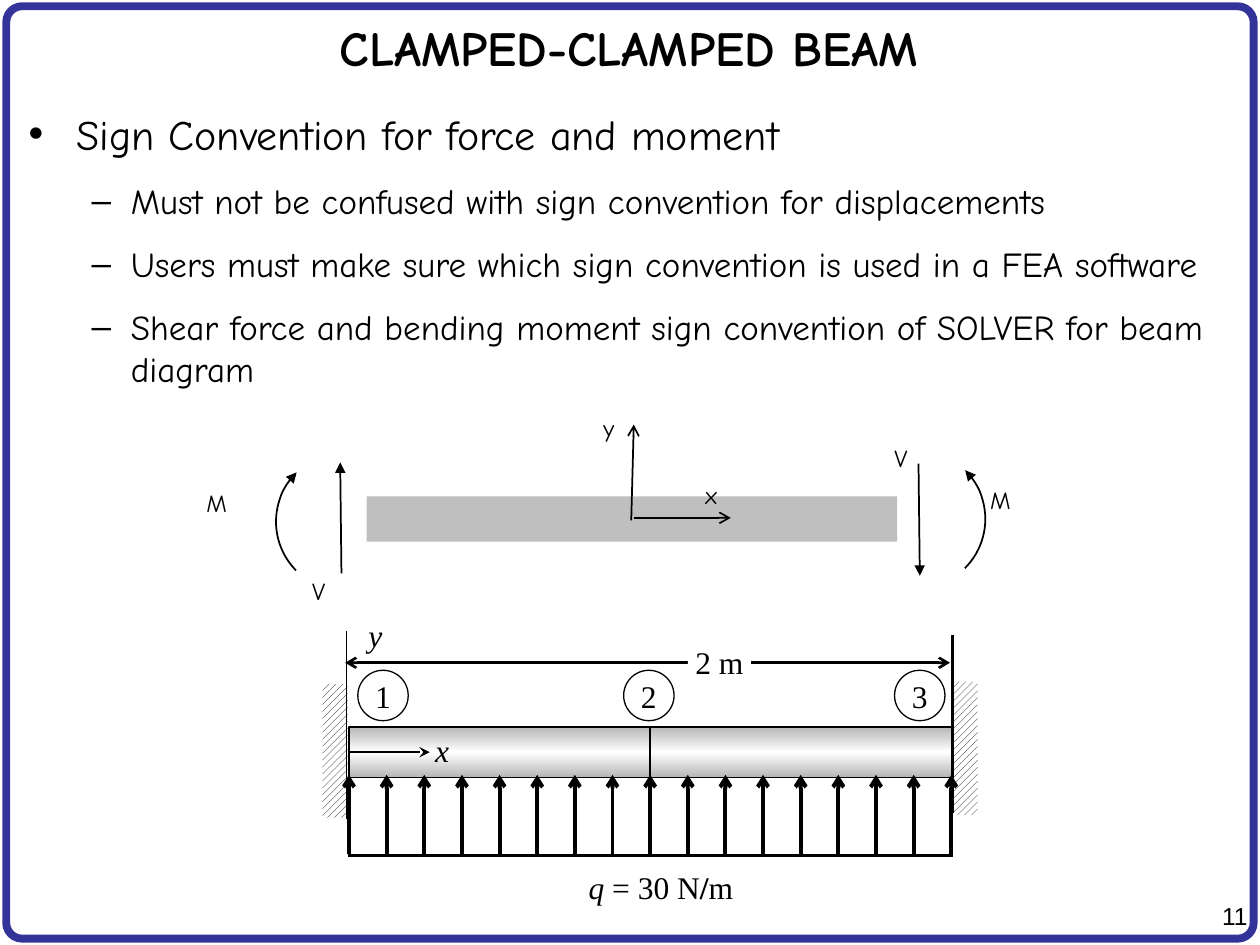
import copy

import pptx
import pptx.dml.color
import pptx.enum.dml
import pptx.enum.shapes
import pptx.enum.text
import pptx.oxml.ns
import pptx.oxml.xmlchemy
import pptx.util

Inches = pptx.util.Inches
Pt = pptx.util.Pt
qn = pptx.oxml.ns.qn
RGBColor = pptx.dml.color.RGBColor
SHAPE = pptx.enum.shapes.MSO_SHAPE
ALIGN = pptx.enum.text.PP_ALIGN
ANCHOR = pptx.enum.text.MSO_ANCHOR

BLACK = RGBColor(0x00, 0x00, 0x00)
WHITE = RGBColor(0xFF, 0xFF, 0xFF)
FRAME_BLUE = RGBColor(0x33, 0x33, 0x99)
BEAM_GREY = RGBColor(0xBF, 0xBF, 0xBF)
STEEL_EDGE = RGBColor(0xB6, 0xB6, 0xB6)

COMIC = "Comic Neue"
TIMES = "Times New Roman"

POINTS = [
    (0, "Sign Convention for force and moment"),
    (1, "Must not be confused with sign convention for displacements"),
    (1, "Users must make sure which sign convention is used in a FEA software"),
    (1, "Shear force and bending moment sign convention of SOLVER for beam diagram"),
]
# level: (bullet, text indent, hanging indent, size)
LEVELS = {0: ("•", 0.38, 0.38, 24), 1: ("–", 0.81, 0.31, 20)}


def add_run(paragraph, text, font, size, bold=False, italic=False):
    run = paragraph.add_run()
    run.text = text
    run.font.name = font
    run.font.size = Pt(size)
    run.font.bold = bold
    run.font.italic = italic
    run.font.color.rgb = BLACK


def set_arrowheads(element, head, tail):
    """Put arrowheads at the start (head) and end (tail) of an outlined element."""
    outline = element.spPr.find(qn("a:ln"))
    for tag, kind in (("a:headEnd", head), ("a:tailEnd", tail)):
        if kind:
            end = outline.makeelement(qn(tag), {"type": kind})
            outline.append(end)


def add_line(shapes, start, end, width=1, head=None, tail=None):
    line = shapes.add_connector(pptx.enum.shapes.MSO_CONNECTOR.STRAIGHT,
                                *(Inches(v) for v in (*start, *end)))
    line.line.width = Pt(width)
    line.line.color.rgb = BLACK
    set_arrowheads(line._element, head, tail)
    properties = line._element.spPr
    properties.append(properties.makeelement(qn("a:effectLst"), {}))
    return line


def add_outline(shapes, kind, box, fill=None, line=None, width=0.75):
    shape = shapes.add_shape(kind, *(Inches(v) for v in box))
    shape.shadow.inherit = False
    if fill is None:
        shape.fill.background()
    else:
        shape.fill.solid()
        shape.fill.fore_color.rgb = fill
    if line is None:
        shape.line.fill.background()
    else:
        shape.line.width = Pt(width)
        shape.line.color.rgb = line
    return shape


def set_tight_text(shape, anchor, *runs):
    """Centre Times text without insets; each run is (text, bold, italic)."""
    frame = shape.text_frame
    frame.margin_left = frame.margin_right = frame.margin_top = frame.margin_bottom = 0
    frame.word_wrap = True
    frame.vertical_anchor = anchor
    frame.paragraphs[0].alignment = ALIGN.CENTER
    for text, bold, italic in runs:
        add_run(frame.paragraphs[0], text, TIMES, 18, bold, italic)


def add_tight_label(shapes, box, *runs):
    label = shapes.add_textbox(*(Inches(v) for v in box))
    set_tight_text(label, ANCHOR.TOP, *runs)


def add_label(shapes, text, left, top, width=0.7, height=0.34, font=COMIC, align=ALIGN.LEFT):
    label = shapes.add_textbox(*(Inches(v) for v in (left, top, width, height)))
    label.text_frame.word_wrap = True
    label.text_frame.paragraphs[0].alignment = align
    add_run(label.text_frame.paragraphs[0], text, font, 14)


def add_page_frame(shapes, left, top, width, height):
    frame = add_outline(shapes, SHAPE.ROUNDED_RECTANGLE, (left, top, width, height),
                        line=FRAME_BLUE, width=4.5)
    frame.adjustments[0] = 0.017
    add_label(shapes, "11", left + width - 0.49, top + height - 0.35, 0.54, 0.33,
              "Arial", ALIGN.RIGHT)


def set_title(title, left, top, width, height):
    title.left, title.top, title.width, title.height = (
        Inches(v) for v in (left, top, width, height))
    title.text_frame.vertical_anchor = ANCHOR.MIDDLE
    heading = title.text_frame.paragraphs[0]
    heading.alignment = ALIGN.CENTER
    add_run(heading, "CLAMPED-CLAMPED BEAM", COMIC, 28, bold=True)


def add_points(shapes, left, top, width, height):
    frame = shapes.add_textbox(*(Inches(v) for v in (left, top, width, height))).text_frame
    frame.word_wrap = True
    for index, (level, text) in enumerate(POINTS):
        bullet, indent, hanging, size = LEVELS[level]
        point = frame.add_paragraph() if index else frame.paragraphs[0]
        point.level = level
        point.space_before = Pt(12)
        properties = point._p.get_or_add_pPr()
        properties.set("marL", str(Inches(indent)))
        properties.set("indent", str(-Inches(hanging)))
        for tag, name, value in (("a:buFont", "typeface", "Arial"), ("a:buChar", "char", bullet)):
            properties.append(properties.makeelement(qn(tag), {name: value}))
        add_run(point, text, COMIC, size)


def add_sign_convention(slide, left, top):
    shapes = slide.shapes.add_group_shape().shapes
    add_line(shapes, (left + 1.17, top + 1.32), (left + 1.16, top + 0.44), tail="triangle")
    add_outline(shapes, SHAPE.RECTANGLE, (left + 1.37, top + 0.71, 4.21, 0.36), BEAM_GREY)
    add_line(shapes, (left + 5.76, top + 1.34), (left + 5.75, top + 0.45), head="triangle")
    for dx, dy, angle, head, tail in ((5.18, 0.34, 45.2, "triangle", None),
                                      (0.65, 0.36, 225.4, None, "triangle")):
        moment = add_outline(shapes, SHAPE.ARC, (left + dx, top + dy, 1.1, 1.1),
                             line=BLACK, width=1)
        moment.rotation = angle
        set_arrowheads(moment._element, head, tail)
    for text, dx, dy in (("M", 6.22, 0.57), ("M", 0, 0.59), ("V", 0.84, 1.29), ("V", 5.46, 0.24)):
        add_label(shapes, text, left + dx, top + dy, height=0.61)

    axes = slide.shapes.add_group_shape().shapes
    add_line(axes, (left + 3.49, top + 0.88), (left + 4.26, top + 0.88), tail="arrow")
    add_line(axes, (left + 3.47, top + 0.9), (left + 3.49, top + 0.14), tail="arrow")
    add_label(axes, "x", left + 3.96, top + 0.53)
    add_label(axes, "y", left + 3.15, top)


def add_beam_element(shapes, left, top, width, height):
    element = add_outline(shapes, SHAPE.RECTANGLE, (left, top, width, height), line=BLACK)
    element.fill.gradient()
    element.fill.gradient_angle = 90
    for stop, color, position in zip(element.fill.gradient_stops, (STEEL_EDGE, WHITE), (0, 0.5)):
        stop.color.rgb = color
        stop.position = position
    stops = element._element.spPr.find(".//" + qn("a:gsLst"))
    far_edge = copy.deepcopy(stops[0])
    far_edge.set("pos", "100000")
    stops.append(far_edge)
    return element


def add_wall(shapes, left, top):
    wall = add_outline(shapes, SHAPE.RECTANGLE, (left, top, 0.2, 1.06))
    wall.fill.patterned()
    wall.fill.pattern = pptx.enum.dml.MSO_PATTERN.WIDE_UPWARD_DIAGONAL
    wall.fill.fore_color.rgb = BLACK
    wall.fill.back_color.rgb = WHITE


def add_loaded_beam(slide, left, top):
    shapes = slide.shapes.add_group_shape().shapes
    first_element = add_beam_element(shapes, left + 0.21, top + 0.88, 2.4, 0.4)
    add_beam_element(shapes, left + 2.6, top + 0.88, 2.4, 0.4)
    add_wall(shapes, left, top + 0.54)
    add_wall(shapes, left + 5, top + 0.52)
    add_line(shapes, (left + 0.19, top + 1.61), (left + 0.19, top + 0.12))
    add_line(shapes, (left + 5, top + 0.15), (left + 5, top + 1.56), 1.25)
    x_axis = add_line(shapes, (left + 0.21, top + 1.08), (left + 0.85, top + 1.08), tail="stealth")
    x_axis.begin_connect(first_element, 1)
    add_tight_label(shapes, (left + 2.04, top + 2, 1.29, 0.4), ("q ", False, True),
                    ("= 30 N", False, False), ("/", True, False), ("m", False, False))
    add_tight_label(shapes, (left + 0.17, top, 0.5, 0.34), ("y", False, True))
    add_tight_label(shapes, (left + 0.7, top + 0.91, 0.5, 0.34), ("x", False, True))
    for node, dx in (("1", 0.28), ("2", 2.39), ("3", 4.54)):
        circle = add_outline(shapes, SHAPE.OVAL, (left + dx, top + 0.43, 0.4, 0.4), WHITE, BLACK)
        set_tight_text(circle, ANCHOR.MIDDLE, (node, False, False))
    add_line(shapes, (left + 0.18, top + 0.37), (left + 4.98, top + 0.37), 1.5, "arrow", "arrow")
    span = add_outline(shapes, SHAPE.RECTANGLE, (left + 2.9, top + 0.19, 0.5, 0.34), WHITE)
    set_tight_text(span, ANCHOR.MIDDLE, ("2 m", False, False))

    load = slide.shapes.add_group_shape().shapes
    arrow_count, load_width = 17, 4.78
    for index in range(arrow_count):
        x = left + 0.21 + load_width * index / (arrow_count - 1)
        add_line(load, (x, top + 1.89), (x, top + 1.26), 2.25, tail="arrow")
    add_line(load, (left + 0.2, top + 1.9), (left + 5, top + 1.9), 2.25)


def main():
    deck = pptx.Presentation()
    deck.slide_width, deck.slide_height = Inches(10), Inches(7.5)
    slide = deck.slides.add_slide(deck.slide_layouts[5])
    add_page_frame(slide.shapes, 0.05, 0.05, 9.9, 7.4)
    set_title(slide.shapes.title, 0.04, 0.05, 9.9, 0.65)
    add_points(slide.shapes, 0.13, 0.81, 9.74, 6.42)
    add_sign_convention(slide, 1.54, 3.23)
    add_loaded_beam(slide, 2.56, 4.89)
    deck.save("out.pptx")


if __name__ == "__main__":
    main()
